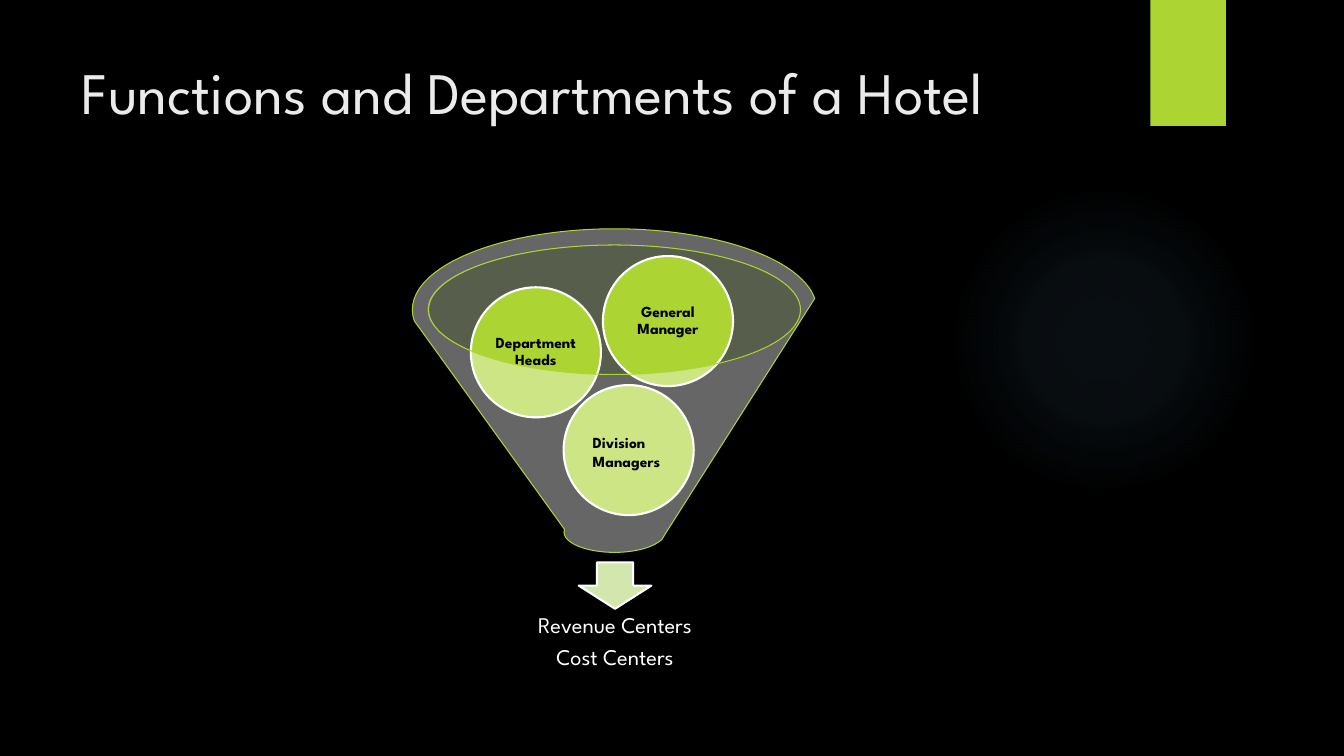
from lxml.etree import SubElement
from pptx import Presentation
from pptx.dml.color import RGBColor
from pptx.enum.shapes import MSO_SHAPE
from pptx.enum.text import MSO_ANCHOR, PP_ALIGN
from pptx.oxml import parse_xml
from pptx.oxml.ns import nsdecls, qn
from pptx.util import Inches, Pt

BLACK = RGBColor(0x00, 0x00, 0x00)
WHITE = RGBColor(0xFF, 0xFF, 0xFF)
PALE = RGBColor(0xEB, 0xEB, 0xEB)
LIME = RGBColor(0xAC, 0xD4, 0x33)
SAGE = RGBColor(0xD2, 0xE6, 0xAE)
MIST = RGBColor(0xDB, 0xEB, 0xBF)
GLOW = RGBColor(0x7A, 0xC4, 0xF0)

FACE = "League Spartan"
TITLE = {"name": FACE, "size": Pt(42), "bold": False}
RESULT = {"name": FACE, "size": Pt(16), "bold": False}
LABEL = {"name": FACE, "size": Pt(11), "bold": True}
CENTER = {"alignment": PP_ALIGN.CENTER, "line_spacing": 0.9}
SPACED = {**CENTER, "space_after": Pt(5.6)}
LEFT = {"alignment": PP_ALIGN.LEFT}

BALL = 1.29
BALLS = [
    (5.59, 3.82, None),
    (4.67, 2.85, "Department Heads"),
    (5.98, 2.54, "General Manager"),
]


def apply(target, values):
    for key, value in values.items():
        setattr(target, key, value)


def write(shape, lines, font, color, para, anchor=MSO_ANCHOR.TOP, pad=None):
    frame = shape.text_frame
    frame.word_wrap = True
    frame.vertical_anchor = anchor
    if pad is not None:
        sides = ("left", "top", "right", "bottom")
        apply(frame, {f"margin_{side}": Inches(pad) for side in sides})
    for i, line in enumerate(lines):
        item = frame.paragraphs[0] if i == 0 else frame.add_paragraph()
        apply(item, para)
        run = item.add_run()
        run.text = line
        apply(run.font, font)
        run.font.color.rgb = color


def add_text(slide, box, *args, **extra):
    shape = slide.shapes.add_textbox(*map(Inches, box))
    write(shape, *args, **extra)


def add_form(slide, kind, box, fill, line=None, width=0, alpha=None):
    shape = slide.shapes.add_shape(kind, *map(Inches, box))
    shape.shadow.inherit = False
    shape.fill.solid()
    shape.fill.fore_color.rgb = fill
    if alpha is not None:
        color = shape.fill._xPr.find(qn("a:solidFill"))[0]
        SubElement(color, qn("a:alpha"), val=str(alpha * 1000))
    if line is None:
        shape.line.fill.background()
    else:
        shape.line.color.rgb = line
        shape.line.width = Pt(width)
    return shape


def add_glow(slide, box, color, stops):
    shape = add_form(slide, MSO_SHAPE.OVAL, box, color)
    marks = "".join(
        f'<a:gs pos="{pos * 1000}"><a:srgbClr val="{color}">'
        f'<a:alpha val="{alpha * 1000}"/></a:srgbClr></a:gs>'
        for pos, alpha in stops
    )
    fade = parse_xml(
        f'<a:gradFill {nsdecls("a")}><a:gsLst>{marks}</a:gsLst>'
        '<a:path path="circle"><a:fillToRect l="50000" t="50000" '
        'r="50000" b="50000"/></a:path></a:gradFill>'
    )
    solid = shape.fill._xPr.find(qn("a:solidFill"))
    solid.getparent().replace(solid, fade)


def main():
    deck = Presentation()
    deck.slide_width, deck.slide_height = Inches(13.33), Inches(7.5)
    slide = deck.slides.add_slide(deck.slide_layouts[6])
    slide.background.fill.solid()
    slide.background.fill.fore_color.rgb = BLACK

    # Backdrop and title
    add_glow(slide, (9.41, 1.83, 3.08, 3.08), GLOW, [(0, 7), (36, 6), (69, 0)])
    add_form(slide, MSO_SHAPE.RECTANGLE, (11.41, 0, 0.75, 1.25), LIME)
    add_text(slide, (0.71, 0.5, 10.29, 1.53),
             ["Functions and Departments of a Hotel"], TITLE, PALE, LEFT)

    # Funnel mouth, arrow and result
    add_form(slide, MSO_SHAPE.OVAL, (4.24, 2.43, 3.7, 1.28), MIST, alpha=40)
    add_form(slide, MSO_SHAPE.DOWN_ARROW, (5.74, 5.58, 0.72, 0.46),
             SAGE, WHITE, 1.5)
    add_text(slide, (4.38, 5.94, 3.44, 0.86),
             ["Revenue Centers", "Cost Centers"], RESULT, WHITE, SPACED,
             anchor=MSO_ANCHOR.MIDDLE, pad=0.12)

    # Roles inside the funnel
    for left, top, role in BALLS:
        ball = add_form(slide, MSO_SHAPE.OVAL, (left, top, BALL, BALL),
                        LIME, WHITE, 1.5)
        if role:
            write(ball, [role], LABEL, BLACK, CENTER, MSO_ANCHOR.MIDDLE, 0.02)

    # Translucent funnel, with the lowest label in front
    add_form(slide, MSO_SHAPE.FUNNEL, (4.09, 2.27, 4.01, 3.21),
             WHITE, LIME, 0.75, alpha=40)
    add_text(slide, (5.78, 4.25, 0.89, 0.66),
             ["Division", "Managers"], LABEL, BLACK, LEFT)

    deck.save("out.pptx")


if __name__ == "__main__":
    main()
